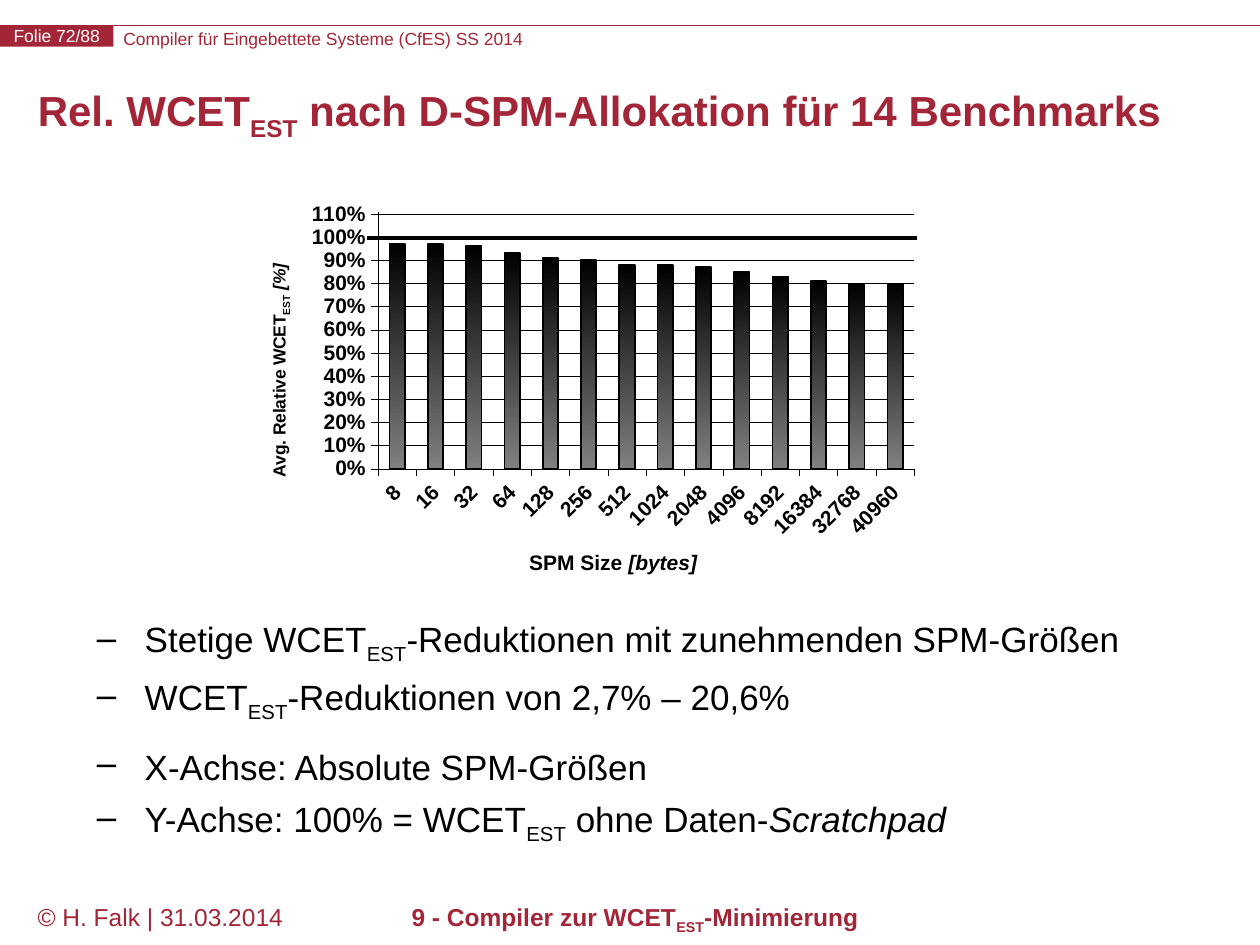
from lxml import etree
from pptx import Presentation
from pptx import util as u
from pptx.chart.data import CategoryChartData
from pptx.dml.color import RGBColor
from pptx.enum import chart as ch, shapes, text
from pptx.oxml.ns import qn

RED = RGBColor(0xA3, 0x26, 0x38)
BLACK = RGBColor(0, 0, 0)
GRAY = RGBColor(0x80, 0x80, 0x80)
WHITE = RGBColor(0xFF, 0xFF, 0xFF)
FONT = "Arial"
LEFT, MID = text.PP_ALIGN.LEFT, text.PP_ALIGN.CENTER

# Content: a line is a list of (words, style); "s" = subscript, "i" = italic
EST = ("EST", "s")
HEAD = [("Compiler für Eingebettete Systeme (CfES) SS 2014", "")]
PAGE = [("Folie 72/88", "")]
TITLE = [("Rel. WCET", ""), EST,
         (" nach D-SPM-Allokation für 14 Benchmarks", "")]
DATE = [("© H. Falk | 31.03.2014", "")]
TOPIC = [("9 - Compiler zur WCET", ""), EST, ("-Minimierung", "")]
POINTS = [
    [("Stetige WCET", ""), EST,
     ("-Reduktionen mit zunehmenden SPM-Größen", "")],
    [("WCET", ""), EST, ("-Reduktionen von 2,7% – 20,6%", "")],
    [("X-Achse: Absolute SPM-Größen", "")],
    [("Y-Achse: 100% = WCET", ""), EST, (" ohne Daten-", ""),
     ("Scratchpad", "i")],
]
X_NAME = [("SPM Size ", ""), ("[bytes]", "i")]
Y_NAME = [("Avg. Relative WCET", ""), EST, (" ", ""), ("[%]", "i")]
SIZES = [str(2 ** n) for n in range(3, 16)] + ["40960"]
WCET = [0.97, 0.97, 0.96, 0.93, 0.91, 0.9, 0.88,
        0.88, 0.87, 0.85, 0.83, 0.81, 0.8, 0.8]
PLOT = {"x": 0.19, "y": 0.05, "w": 0.8, "h": 0.64}


def write(para, line, size=14, color=BLACK, bold=False, align=None):
    """Fill a paragraph with styled runs."""
    if align is not None:
        para.alignment = align
    for words, style in line:
        run = para.add_run()
        run.text = words
        font = run.font
        font.name, font.size, font.bold = FONT, u.Pt(size), bold
        font.italic = style == "i"
        font.color.rgb = color
        if style == "s":
            run._r.get_or_add_rPr().set("baseline", "-25000")


def box(slide, x, y, w, h, inset=True):
    """Add a wrapping text box and return its frame."""
    frame = slide.shapes.add_textbox(*map(u.Inches, (x, y, w, h))).text_frame
    frame.word_wrap = True
    if not inset:
        bare(frame)
    return frame


def bare(frame):
    frame.margin_left = frame.margin_right = 0
    frame.margin_top = frame.margin_bottom = 0


def rule(slide, x1, x2, y, color, width):
    """Add a level line."""
    line = slide.shapes.add_connector(
        shapes.MSO_CONNECTOR.STRAIGHT, *map(u.Inches, (x1, y, x2, y)))
    line.line.color.rgb = color
    line.line.width = u.Pt(width)
    etree.SubElement(line._element.spPr, qn("a:effectLst"))


def stroke(line, width):
    line.color.rgb = BLACK
    line.width = u.Pt(width)


def bullet(para):
    props = para._p.get_or_add_pPr()
    props.set("marL", str(u.Inches(0.38)))
    props.set("indent", str(-u.Inches(0.38)))
    etree.SubElement(props, qn("a:buChar")).set("char", "–")


def style_axis(axis, name, size):
    axis.has_title = True
    write(axis.axis_title.text_frame.paragraphs[0], name, size=size, bold=True)
    axis.major_tick_mark = ch.XL_TICK_MARK.OUTSIDE
    axis.minor_tick_mark = ch.XL_TICK_MARK.NONE
    font = axis.tick_labels.font
    font.name, font.size, font.bold = FONT, u.Pt(12), True
    font.color.rgb = BLACK
    stroke(axis.format.line, 0.25)


def add_plot(slide):
    data = CategoryChartData(number_format="0%")
    data.categories = SIZES
    data.add_series("Series 1", WCET)
    chart = slide.shapes.add_chart(
        ch.XL_CHART_TYPE.COLUMN_CLUSTERED,
        *map(u.Inches, (1.99, 1.52, 5.32, 3.19)), data).chart
    chart.has_legend = chart.has_title = False
    chart.font.name, chart.font.size = FONT, u.Pt(11.2)
    chart.font.color.rgb = BLACK

    # Axes
    cat, val = chart.category_axis, chart.value_axis
    style_axis(cat, X_NAME, 12)
    style_axis(val, Y_NAME, 10)
    cat._element.find(qn("c:txPr")).find(qn("a:bodyPr")).set("rot", "-2700000")
    val.minimum_scale, val.maximum_scale, val.major_unit = 0, 1.11, 0.1
    val.tick_labels.number_format = "0%"
    val.tick_labels.number_format_is_linked = False
    val.has_major_gridlines = True
    stroke(val.major_gridlines.format.line, 0.25)

    # Bars
    bars = chart.plots[0]
    bars.gap_width, bars.overlap, bars.vary_by_categories = 150, -20, False
    look = bars.series[0].format
    look.fill.gradient()
    look.fill.gradient_angle = 270
    for stop, color, place in zip(look.fill.gradient_stops,
                                  (BLACK, GRAY), (0, 1)):
        stop.color.rgb, stop.position = color, place
    stroke(look.line, 1)

    # Inner plot area
    area = chart._chartSpace.find(".//" + qn("c:plotArea"))
    for old in area.findall(qn("c:layout")):
        area.remove(old)
    layout = etree.SubElement(area, qn("c:layout"))
    area.insert(0, layout)
    spot = etree.SubElement(layout, qn("c:manualLayout"))
    parts = [("layoutTarget", "inner"), ("xMode", "edge"), ("yMode", "edge")]
    for tag, value in parts + list(PLOT.items()):
        etree.SubElement(spot, qn("c:" + tag)).set("val", str(value))


def main():
    deck = Presentation()
    deck.slide_width, deck.slide_height = u.Inches(10), u.Inches(7.5)
    slide = deck.slides.add_slide(deck.slide_layouts[5])

    # Header
    rule(slide, 0, 10, 0.2, RED, 0.75)
    write(box(slide, 0.98, 0.22, 6.6, 0.17, inset=False).paragraphs[0],
          HEAD, size=10, color=RED)
    tag = slide.shapes.add_shape(shapes.MSO_SHAPE.RECTANGLE,
                                 *map(u.Inches, (0, 0.2, 0.9, 0.17)))
    tag.shadow.inherit = False
    tag.fill.solid()
    tag.fill.fore_color.rgb = RED
    tag.line.fill.background()
    bare(tag.text_frame)
    tag.text_frame.word_wrap = False
    tag.text_frame.vertical_anchor = text.MSO_ANCHOR.MIDDLE
    write(tag.text_frame.paragraphs[0], PAGE, size=10, color=WHITE, align=MID)

    # Title
    title = slide.shapes.title
    title.left, title.top, title.width, title.height = map(
        u.Inches, (0.2, 0.6, 9.61, 0.72))
    frame = title.text_frame
    frame.auto_size = text.MSO_AUTO_SIZE.NONE
    frame.vertical_anchor = text.MSO_ANCHOR.MIDDLE
    frame.paragraphs[0].line_spacing = u.Pt(24)
    write(frame.paragraphs[0], TITLE, size=24, color=RED, bold=True, align=LEFT)

    # Chart with its 100% mark
    add_plot(slide)
    rule(slide, 2.91, 7.28, 1.89, BLACK, 2.5)

    # Points, in two pairs
    frame = box(slide, 0.67, 4.78, 8.82, 1.84)
    for i, line in enumerate(POINTS):
        para = frame.paragraphs[0] if i == 0 else frame.add_paragraph()
        para.line_spacing = 1.2
        para.space_before = u.Pt(8.3 if i == 2 else 0)
        bullet(para)
        write(para, line, size=20)

    # Footer
    write(box(slide, 0.2, 7.11, 2.2, 0.5).paragraphs[0], DATE, color=RED)
    write(box(slide, 2.01, 7.11, 6.06, 0.5).paragraphs[0], TOPIC,
          color=RED, bold=True, align=MID)

    deck.save("out.pptx")


if __name__ == "__main__":
    main()
